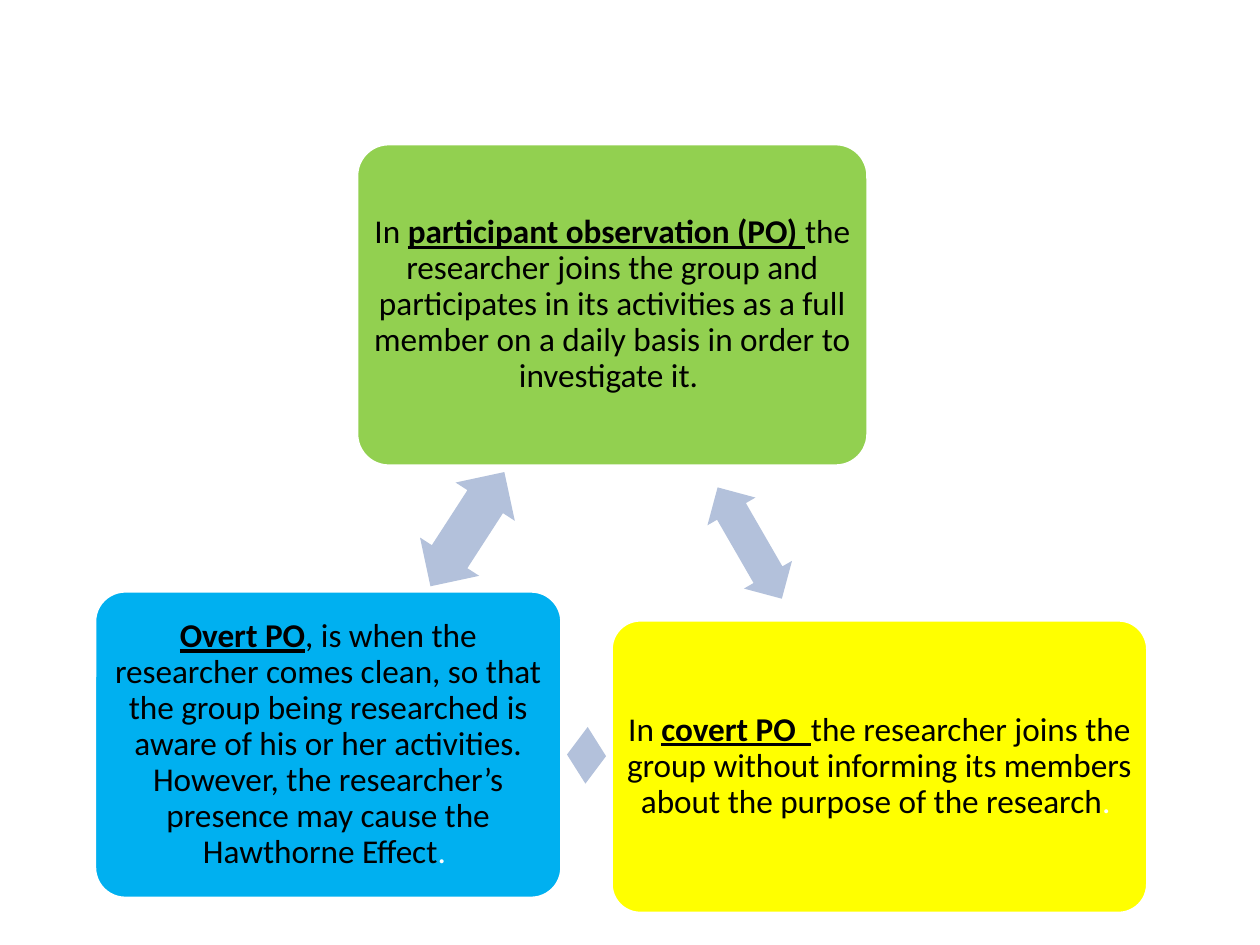
import pptx
import pptx.util
import pptx.dml.color
import pptx.enum.shapes
import pptx.enum.text

Inches = pptx.util.Inches
Pt = pptx.util.Pt
SHAPES = pptx.enum.shapes.MSO_SHAPE

BLACK, WHITE, ARROW_BLUE = "000000", "FFFFFF", "B3C1DB"


def rgb(value):
    return pptx.dml.color.RGBColor.from_string(value)


def add_filled(kind, box, fill):
    shape = slide.shapes.add_shape(kind, *map(Inches, box))
    shape.shadow.inherit = False
    shape.fill.solid()
    shape.fill.fore_color.rgb = rgb(fill)
    return shape


prs = pptx.Presentation()
prs.slide_width, prs.slide_height = Inches(10), Inches(7.5)
slide = prs.slides.add_slide(prs.slide_layouts[6])

# Each card: box, fill, runs of (text, is key term, colour)
cards = [
    ((2.83, 1.14, 4.06, 2.56), "92D050", [
        ("In ", False, BLACK),
        ("participant observation (PO) ", True, BLACK),
        ("the researcher joins the group and participates in its activities "
         "as a full member on a daily basis in order to investigate it. ", False, BLACK),
    ]),
    ((4.85, 4.92, 4.26, 2.33), "FFFF00", [
        ("In ", False, BLACK),
        ("covert PO  ", True, BLACK),
        ("the researcher joins the group without informing its members "
         "about the purpose of the research", False, BLACK),
        (". ", False, WHITE),
    ]),
    ((0.75, 4.69, 3.71, 2.44), "00B0F0", [
        ("Overt PO", True, BLACK),
        (", is when the researcher comes clean, so that the group being researched "
         "is aware of his or her activities. However, the researcher’s presence "
         "may cause the Hawthorne Effect", False, BLACK),
        (". ", False, WHITE),
    ]),
]
for box, fill, runs in cards:
    card = add_filled(SHAPES.ROUNDED_RECTANGLE, box, fill)
    card.adjustments[0] = 0.1
    card.line.color.rgb = rgb(WHITE)
    card.line.width = Pt(2)

    frame = card.text_frame
    frame.word_wrap = True
    frame.vertical_anchor = pptx.enum.text.MSO_ANCHOR.MIDDLE
    # The rounded corners already inset the text area
    frame.margin_left = frame.margin_right = Inches(0.01)
    frame.margin_top = frame.margin_bottom = Inches(0.01)
    definition = frame.paragraphs[0]
    definition.alignment = pptx.enum.text.PP_ALIGN.CENTER
    definition.line_spacing = 0.9
    for text, is_term, colour in runs:
        run = definition.add_run()
        run.text = text
        run.font.name = "Calibri"
        run.font.size = Pt(19)
        run.font.bold = run.font.underline = is_term
        run.font.color.rgb = rgb(colour)

# Double arrows linking the cards: box, rotation
links = [
    ((5.44, 4.09, 1.02, 0.44), 60),
    ((4.5, 5.77, 0.31, 0.45), 182.3),
    ((3.17, 3.92, 1.08, 0.56), 302.9),
]
for box, rotation in links:
    link = add_filled(SHAPES.LEFT_RIGHT_ARROW, box, ARROW_BLUE)
    link.adjustments[0] = 0.6
    link.adjustments[1] = 0.5
    link.rotation = rotation
    link.line.fill.background()

prs.save("out.pptx")
